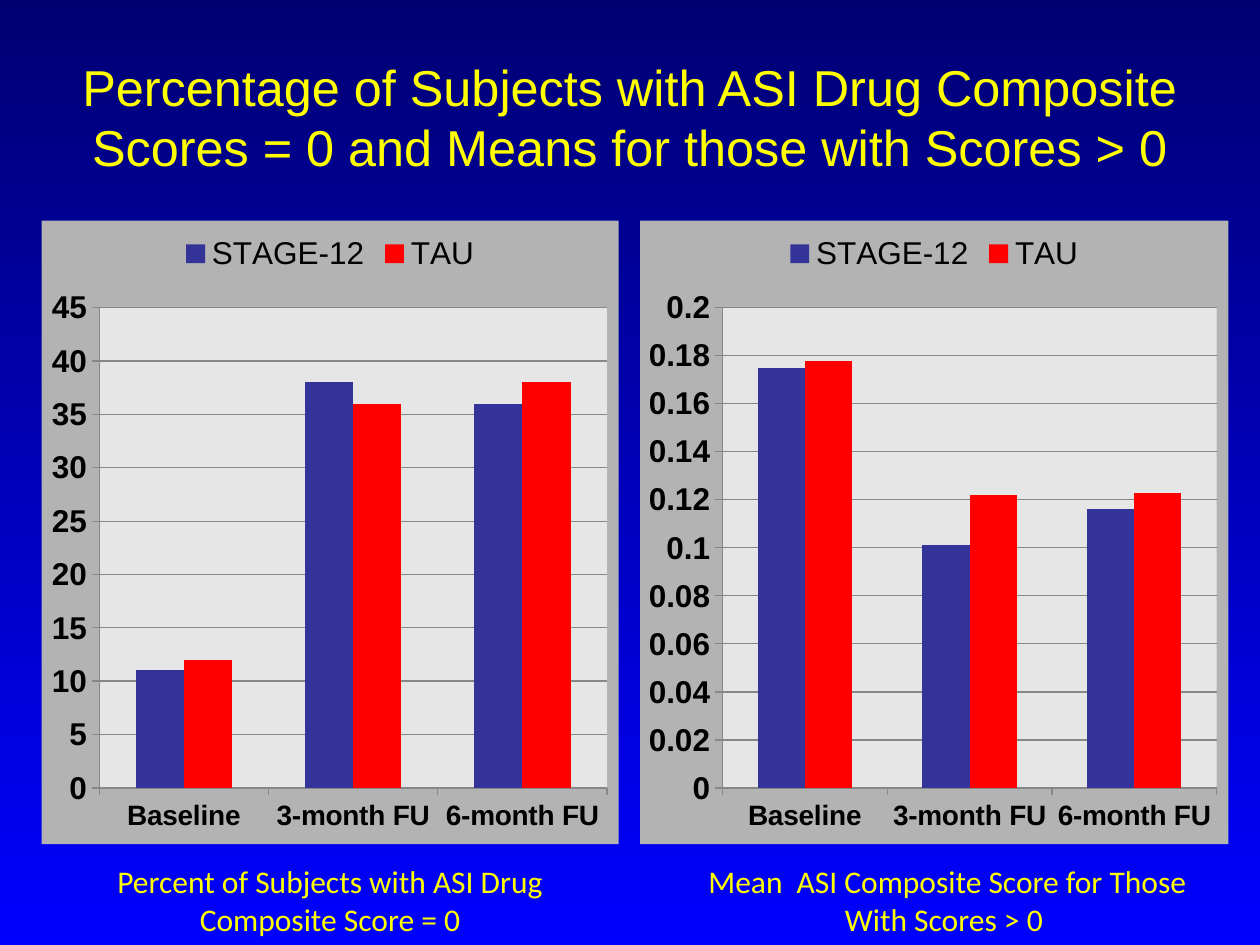
from lxml.etree import fromstring
from pptx import Presentation
from pptx.chart.data import CategoryChartData
from pptx.dml.color import RGBColor
from pptx.enum.chart import XL_CHART_TYPE as ChartType
from pptx.enum.chart import XL_LEGEND_POSITION as LegendPosition
from pptx.enum.chart import XL_TICK_MARK as TickMark
from pptx.enum.text import MSO_ANCHOR as Anchor
from pptx.enum.text import MSO_AUTO_SIZE as AutoSize
from pptx.enum.text import PP_ALIGN as Align
from pptx.oxml.ns import nsdecls
from pptx.util import Inches, Pt

COLORS = {
    "top": "000072", "bottom": "0000FF", "heading": "FFFF00", "ink": "000000",
    "chart": "B3B3B3", "plot": "E6E6E6", "line": "878787",
    "STAGE-12": "333399", "TAU": "FF0000",
}
VISITS = ["Baseline", "3-month FU", "6-month FU"]


def color(key):
    """Return the named colour."""
    return RGBColor.from_string(COLORS[key])


def inches(box):
    """Turn a left, top, width, height box into lengths."""
    return [Inches(side) for side in box]


def paint_background(slide):
    """Fill the slide from dark blue at the top to bright blue."""
    fill = slide.background.fill
    fill.gradient()
    fill.gradient_angle = 270
    for stop, key, position in zip(fill.gradient_stops, ("top", "bottom"), (0, 1)):
        stop.color.rgb = color(key)
        stop.position = position


def write_lines(frame, lines, font, size):
    """Write centred yellow paragraphs into a text frame."""
    for index, line in enumerate(lines):
        paragraph = frame.add_paragraph() if index else frame.paragraphs[0]
        paragraph.alignment = Align.CENTER
        run = paragraph.add_run()
        run.text = line
        run.font.name, run.font.size = font, Pt(size)
        run.font.color.rgb = color("heading")


def place_title(slide, box, heading):
    """Move the title placeholder into its box and write the heading."""
    title = slide.shapes.title
    title.left, title.top, title.width, title.height = inches(box)
    frame = title.text_frame
    frame.vertical_anchor = Anchor.MIDDLE
    frame.auto_size = AutoSize.NONE
    write_lines(frame, [heading], "Arial", 28.8)


def solid_area(key):
    """Build the properties of a plain filled chart area."""
    return fromstring(
        f'<c:spPr {nsdecls("c", "a")}><a:solidFill><a:srgbClr val="{COLORS[key]}"/>'
        "</a:solidFill><a:ln><a:noFill/></a:ln></c:spPr>")


def inner_layout(plot_box):
    """Build the layout that fixes the inner plot as fractions of the chart."""
    places = "".join(f'<c:{name} val="{value}"/>' for name, value in zip("xywh", plot_box))
    return fromstring(
        f'<c:layout {nsdecls("c")}><c:manualLayout><c:layoutTarget val="inner"/>'
        f'<c:xMode val="edge"/><c:yMode val="edge"/>{places}</c:manualLayout></c:layout>')


def style_axis(axis, size):
    """Give an axis bold labels, outside ticks and a grey line."""
    axis.major_tick_mark = TickMark.OUTSIDE
    axis.minor_tick_mark = TickMark.NONE
    axis.format.line.color.rgb = color("line")
    font = axis.tick_labels.font
    font.name, font.size, font.bold = "Arial", Pt(size), True
    font.color.rgb = color("ink")


def place_chart(slide, box, scores, top_value, step, plot_box):
    """Draw the clustered columns of both groups in the box."""
    scores_data = CategoryChartData()
    scores_data.categories = VISITS
    for group, values in scores.items():
        scores_data.add_series(group, values)
    chart = slide.shapes.add_chart(
        ChartType.COLUMN_CLUSTERED, *inches(box), scores_data).chart
    chart.has_title = False
    chart.font.name, chart.font.size = "Arial", Pt(18)
    chart.font.color.rgb = color("ink")

    chart.has_legend = True
    legend = chart.legend
    legend.position, legend.include_in_layout = LegendPosition.TOP, False
    legend.font.name, legend.font.size = "Arial", Pt(18)
    legend.font.color.rgb = color("ink")

    style_axis(chart.category_axis, 16)
    value_axis = chart.value_axis
    style_axis(value_axis, 18)
    value_axis.minimum_scale, value_axis.maximum_scale = 0, top_value
    value_axis.major_unit = step
    value_axis.has_major_gridlines = True
    value_axis.major_gridlines.format.line.color.rgb = color("line")

    columns = chart.plots[0]
    columns.gap_width, columns.overlap, columns.vary_by_categories = 150, 0, False
    for group in columns.series:
        group.format.fill.solid()
        group.format.fill.fore_color.rgb = color(group.name)

    chart_space = chart.element
    plot_area = chart_space.chart.plotArea
    for old_layout in plot_area.findall("{*}layout"):
        plot_area.remove(old_layout)
    plot_area.insert(0, inner_layout(plot_box))
    plot_area.append(solid_area("plot"))
    chart_space.chart.addnext(solid_area("chart"))


def place_caption(slide, box, lines, wrap):
    """Write the caption below a chart."""
    frame = slide.shapes.add_textbox(*inches(box)).text_frame
    frame.word_wrap = wrap
    frame.auto_size = AutoSize.SHAPE_TO_FIT_TEXT
    write_lines(frame, lines, "Calibri", 18)


def main():
    """Build and save the slide."""
    deck = Presentation()
    deck.slide_width, deck.slide_height = Inches(10), Inches(7.5)
    slide = deck.slides.add_slide(deck.slide_layouts[5])
    paint_background(slide)
    place_title(slide, (0.5, 0.3, 9, 1.25),
                "Percentage of Subjects with ASI Drug Composite Scores = 0 "
                "and Means for those with Scores > 0")
    place_chart(slide, (0.33, 1.75, 4.58, 4.95),
                {"STAGE-12": (11, 38, 36), "TAU": (12, 36, 38)},
                45, 5, (0.1, 0.14, 0.88, 0.77))
    place_chart(slide, (5.08, 1.75, 4.67, 4.95),
                {"STAGE-12": (0.175, 0.101, 0.116), "TAU": (0.178, 0.122, 0.123)},
                0.2, 0.02, (0.14, 0.14, 0.84, 0.77))
    place_caption(slide, (0.33, 6.79, 4.58, 0.71),
                  ["Percent of Subjects with ASI Drug Composite Score = 0"], True)
    place_caption(slide, (5.5, 6.79, 4.04, 0.71),
                  ["Mean  ASI Composite Score for Those", "With Scores > 0 "], False)
    deck.save("out.pptx")


if __name__ == "__main__":
    main()
